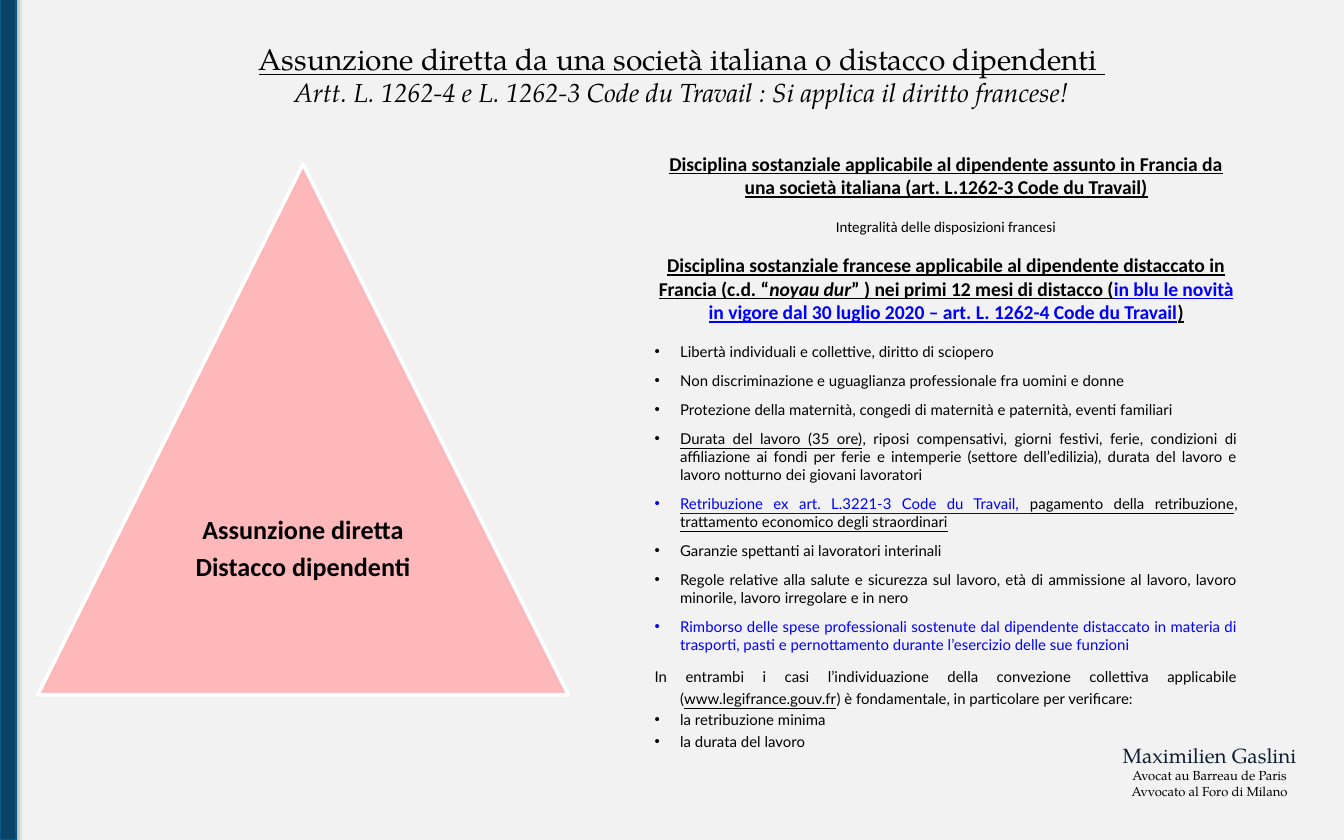
from dataclasses import dataclass

from lxml.etree import SubElement
from pptx import Presentation
from pptx.dml.color import RGBColor
from pptx.enum.shapes import MSO_SHAPE
from pptx.enum.text import MSO_ANCHOR, MSO_AUTO_SIZE, PP_ALIGN
from pptx.oxml.ns import qn
from pptx.util import Inches, Pt


@dataclass(frozen=True)
class Theme:
    background: str = "F2F2F2"
    ink: str = "000000"
    news: str = "0000FF"
    signature: str = "0E1C30"
    triangle: str = "FFB8B9"
    triangle_edge: str = "FFFFFF"
    bar: str = "094365"
    bar_edge: str = "095886"
    serif: str = "TeX Gyre Pagella"
    sans: str = "Calibri"
    list_font: str = "Lato"
    title: float = 16
    subtitle: float = 14
    label: float = 14
    heading: float = 10.5
    body: float = 8
    name: float = 11
    role: float = 7


THEME = Theme()
UNDERLINED = {"underline": True}
NEWS = {"color": THEME.news}
BULLET_INDENT = 0.19


class SlideBuilder:
    def __init__(self, slide, theme):
        self.slide = slide
        self.theme = theme
        slide.background.fill.solid()
        slide.background.fill.fore_color.rgb = RGBColor.from_string(theme.background)

    def fill_frame(self, frame, paragraphs, anchor=MSO_ANCHOR.TOP, wrap=True, margins=(0.1, 0.05, 0.1, 0.05)):
        """Fill a frame with (runs, run format, paragraph format) entries."""
        left, top, right, bottom = map(Inches, margins)
        frame_format = {
            "auto_size": MSO_AUTO_SIZE.NONE, "word_wrap": wrap, "vertical_anchor": anchor,
            "margin_left": left, "margin_top": top, "margin_right": right, "margin_bottom": bottom,
        }
        for key, value in frame_format.items():
            setattr(frame, key, value)
        for index, (runs, base, layout) in enumerate(paragraphs):
            paragraph = frame.add_paragraph() if index else frame.paragraphs[0]
            self.lay_out(paragraph, **layout)
            for text, changes in runs:
                run = paragraph.add_run()
                run.text = text
                self.style(run.font, {**base, **changes})

    def lay_out(self, paragraph, bullet=False, indent=0, **layout):
        defaults = {"alignment": PP_ALIGN.CENTER, "space_before": Pt(0),
                    "space_after": Pt(0), "line_spacing": 1.0}
        for key, value in {**defaults, **layout}.items():
            setattr(paragraph, key, value)
        properties = paragraph._p.get_or_add_pPr()
        properties.set("marL", str(Inches(indent)))
        properties.set("indent", str(-Inches(indent)))
        if bullet:
            SubElement(properties, qn("a:buFont"), typeface="Arial")
            SubElement(properties, qn("a:buChar"), char="•")
        else:
            SubElement(properties, qn("a:buNone"))

    def style(self, font, changes):
        values = {"color": self.theme.ink, "bold": False, "italic": False, "underline": False, **changes}
        font.color.rgb = RGBColor.from_string(values.pop("color"))
        font.size = Pt(values.pop("size"))
        for key, value in values.items():
            setattr(font, key, value)

    def placeholder(self, index, box, paragraphs):
        holder = self.slide.placeholders[index]
        for key, value in zip(("left", "top", "width", "height"), box):
            setattr(holder, key, Inches(value))
        self.fill_frame(holder.text_frame, paragraphs)

    def text(self, box, paragraphs, **frame_format):
        text_box = self.slide.shapes.add_textbox(*map(Inches, box))
        self.fill_frame(text_box.text_frame, paragraphs, **frame_format)

    def shape(self, kind, box, fill, edge, edge_width):
        shape = self.slide.shapes.add_shape(kind, *map(Inches, box))
        shape.shadow.inherit = False
        shape.fill.solid()
        shape.fill.fore_color.rgb = RGBColor.from_string(fill)
        shape.line.color.rgb = RGBColor.from_string(edge)
        shape.line.width = Pt(edge_width)
        return shape

    def cast_shadow(self, shape, blur, distance, opacity):
        effects = shape._element.spPr.find(qn("a:effectLst"))
        shadow = SubElement(effects, qn("a:outerShdw"), blurRad=str(Pt(blur)), dist=str(Pt(distance)),
                            dir="5400000", rotWithShape="0")
        color = SubElement(shadow, qn("a:srgbClr"), val=self.theme.ink)
        SubElement(color, qn("a:alpha"), val=str(opacity * 1000))


def discipline_paragraphs(theme):
    heading = {"name": theme.sans, "size": theme.heading, "bold": True, "underline": True}
    remark = {"name": theme.sans, "size": theme.body}
    item = {"name": theme.list_font, "size": theme.body}
    spaced = {"space_after": Pt(9.8)}
    listed = {"alignment": PP_ALIGN.JUSTIFY, "indent": BULLET_INDENT, "bullet": True, "space_after": Pt(6)}
    closing = {"alignment": PP_ALIGN.JUSTIFY, "indent": BULLET_INDENT, "line_spacing": 1.2}

    protections = [
        [("Libertà individuali e collettive, diritto di sciopero", {})],
        [("Non discriminazione e uguaglianza professionale fra uomini e donne", {})],
        [("Protezione della maternità, congedi di maternità e paternità, eventi familiari", {})],
        [("Durata del lavoro (35 ore)", UNDERLINED),
         (", riposi compensativi, giorni festivi, ferie, condizioni di affiliazione ai fondi per ferie e "
          "intemperie (settore dell’edilizia), durata del lavoro e lavoro notturno dei giovani lavoratori", {})],
        [("Retribuzione ex art. L.3221-3 Code du Travail, ", {**NEWS, **UNDERLINED}),
         ("pagamento della retribuzione", UNDERLINED), (", ", {}),
         ("trattamento economico degli straordinari", UNDERLINED)],
        [("Garanzie spettanti ai lavoratori interinali", {})],
        [("Regole relative alla salute e sicurezza sul lavoro, età di ammissione al lavoro, lavoro minorile, "
          "lavoro irregolare e in nero", {})],
        [("Rimborso delle spese professionali sostenute dal dipendente distaccato in materia di trasporti, "
          "pasti e pernottamento durante l’esercizio delle sue funzioni", NEWS)],
    ]
    checks = ["la retribuzione minima", "la durata del lavoro"]
    return [
        ([("Disciplina sostanziale applicabile al dipendente assunto in Francia da una società italiana "
           "(art. L.1262-3 Code du Travail)", {})], heading, spaced),
        ([("Integralità delle disposizioni francesi", {})], remark, spaced),
        ([("Disciplina sostanziale francese applicabile al dipendente distaccato in Francia (c.d. “", {}),
          ("noyau dur", {"italic": True}),
          ("” ) nei primi 12 mesi di distacco (", {}),
          ("in blu le novità in vigore dal 30 luglio 2020 – art. L. 1262-4 Code du Travail", NEWS),
          (")", {})], heading, spaced),
        *[(runs, item, listed) for runs in protections],
        ([("In entrambi i casi l’individuazione della convezione collettiva applicabile (", {}),
          ("www.legifrance.gouv.fr", UNDERLINED),
          (") è fondamentale, in particolare per verificare:", {})], item, closing),
        *[([(check, {})], item, {**closing, "bullet": True}) for check in checks],
    ]


def main():
    presentation = Presentation()
    presentation.slide_width, presentation.slide_height = Inches(10), Inches(6.25)
    theme = THEME
    builder = SlideBuilder(presentation.slides.add_slide(presentation.slide_layouts[1]), theme)

    title = {"name": theme.serif, "size": theme.title, "underline": True}
    subtitle = {"name": theme.serif, "size": theme.subtitle, "italic": True}
    builder.placeholder(0, (0.91, 0.25, 8.33, 0.84), [
        ([("Assunzione diretta da una società italiana o distacco dipendenti ", {})], title, {}),
        ([("Artt. L. 1262-4 e L. 1262-3 Code du Travail : Si applica il diritto francese!", {})], subtitle, {}),
    ])
    builder.placeholder(1, (4.77, 1.08, 4.54, 4.71), discipline_paragraphs(theme))

    name = {"name": theme.serif, "size": theme.name, "color": theme.signature}
    role = {"name": theme.serif, "size": theme.role}
    builder.text((8.26, 5.49, 1.48, 0.5), [
        ([("Maximilien Gaslini", {})], name, {}),
        ([("Avocat au Barreau de Paris", {})], role, {}),
        ([("Avvocato al Foro di Milano", {})], role, {}),
    ], wrap=False, margins=(0.08, 0.04, 0.08, 0.04))

    triangle = builder.shape(MSO_SHAPE.ISOSCELES_TRIANGLE, (0.28, 1.22, 3.95, 3.95),
                             theme.triangle, theme.triangle_edge, 2)
    label = {"name": theme.sans, "size": theme.label, "bold": True}
    builder.fill_frame(triangle.text_frame, [
        ([(line, {})], label, {"line_spacing": 0.9, "space_after": Pt(4.5)})
        for line in ("Assunzione diretta", "Distacco dipendenti")
    ], anchor=MSO_ANCHOR.MIDDLE, margins=(0.06, 0.06, 0.06, 0.25))

    bar = builder.shape(MSO_SHAPE.RECTANGLE, (0, -0.1, 0.12, 6.35), theme.bar, theme.bar_edge, 0.75)
    builder.cast_shadow(bar, blur=3.1, distance=1.8, opacity=35)

    presentation.save("out.pptx")


if __name__ == "__main__":
    main()
